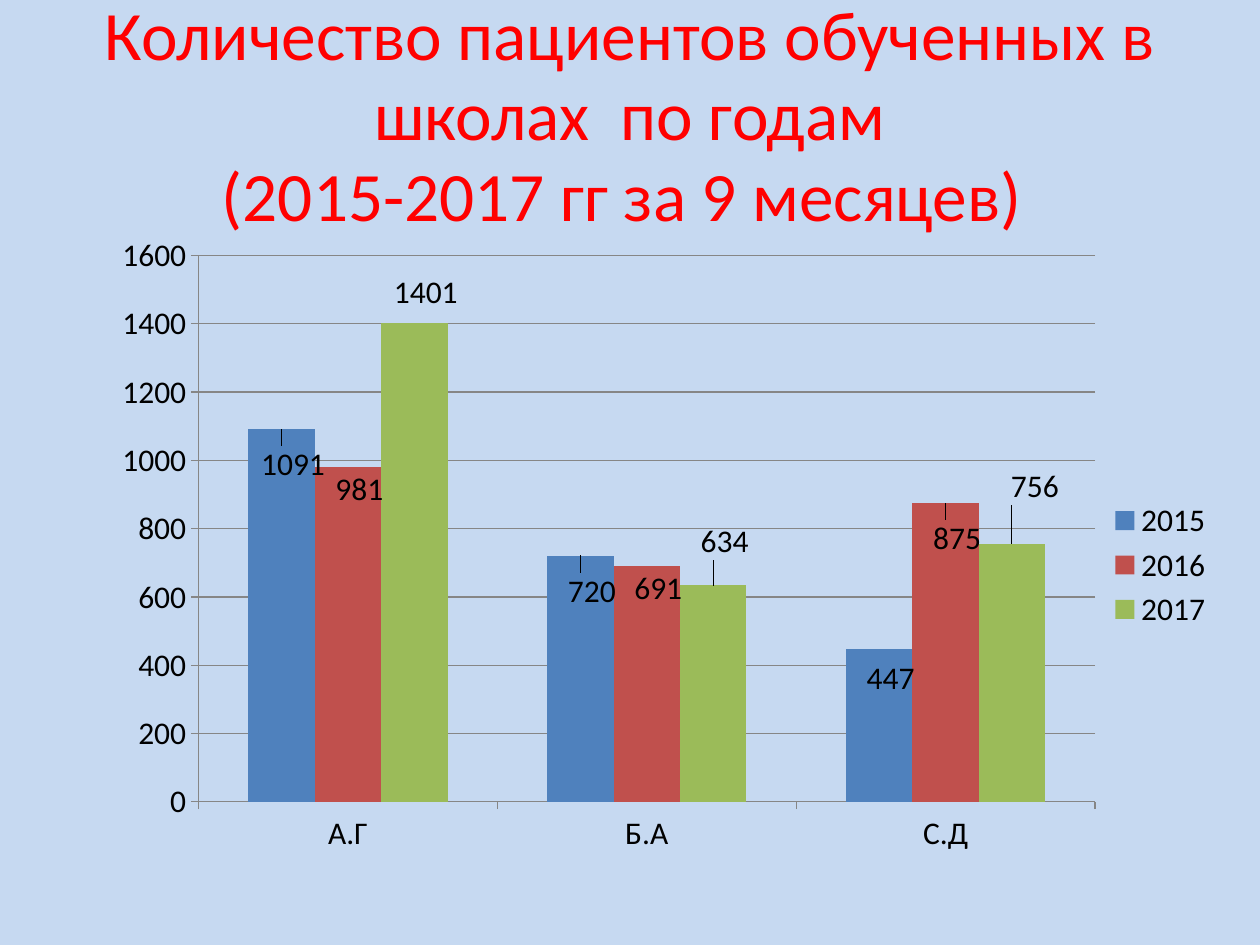
from lxml.etree import SubElement
from pptx import Presentation
from pptx.chart.data import CategoryChartData
from pptx.dml.color import RGBColor
from pptx.enum.chart import XL_CHART_TYPE as ChartType
from pptx.enum.chart import XL_LABEL_POSITION as LabelPosition
from pptx.enum.chart import XL_LEGEND_POSITION as LegendPosition
from pptx.enum.chart import XL_TICK_MARK as TickMark
from pptx.enum.text import MSO_ANCHOR, PP_ALIGN
from pptx.oxml.ns import qn
from pptx.util import Inches, Pt

FONT = "Calibri"
COLORS = {
    "background": "C6D9F1", "title": "FF0000", "text": "000000", "line": "868686",
    "2015": "4F81BD", "2016": "C0504D", "2017": "9BBB59",
}
CLINICS = ["А.Г", "Б.А", "С.Д"]
PATIENTS = {
    "2015": [1091, 720, 447],
    "2016": [981, 691, 875],
    "2017": [1401, 634, 756],
}
# Shift of each value label from the bar's end, as a share of the chart size
LABEL_SHIFTS = {
    "2015": [(0.01, 0.09), (0.01, 0.09), (0.01, 0.08)],
    "2016": [(0.01, 0.07), (0.01, 0.07), (0.01, 0.09)],
    "2017": [(0.01, -0.01), (0.01, -0.03), (0.02, -0.05)],
}


def color(name):
    return RGBColor.from_string(COLORS[name])


def add_manual_layout(layout, **settings):
    manual = SubElement(layout, qn("c:manualLayout"))
    for name, value in settings.items():
        SubElement(manual, qn(f"c:{name}")).set("val", str(value))


def add_title(page, left, top, width, height):
    box = page.shapes.add_textbox(left, top, width, height)
    frame = box.text_frame
    frame.word_wrap = True
    frame.vertical_anchor = MSO_ANCHOR.MIDDLE
    para = frame.paragraphs[0]
    para.text = ("Количество пациентов обученных в школах  по годам\v"
                 "(2015-2017 гг за 9 месяцев) ")
    para.alignment = PP_ALIGN.CENTER
    para.line_spacing = 0.97
    para.font.name = FONT
    para.font.size = Pt(39.6)
    para.font.color.rgb = color("title")


def style_axis(axis):
    axis.major_tick_mark = TickMark.OUTSIDE
    axis.minor_tick_mark = TickMark.NONE
    axis.format.line.color.rgb = color("line")
    axis.format.line.width = Pt(0.75)


def style_series(series):
    series.format.fill.solid()
    series.format.fill.fore_color.rgb = color(series.name)
    series.invert_if_negative = False
    labels = series.data_labels
    labels.show_value = True
    labels.position = LabelPosition.OUTSIDE_END
    for index in range(len(CLINICS)):
        series.points[index].data_label.position = LabelPosition.OUTSIDE_END
    label_nodes = series._element.iter(qn("c:dLbl"))
    for node, (x, y) in zip(list(label_nodes), LABEL_SHIFTS[series.name]):
        layout = SubElement(node, qn("c:layout"))
        node.find(qn("c:idx")).addnext(layout)
        add_manual_layout(layout, x=x, y=y)


def add_patient_chart(page, left, top, width, height):
    data = CategoryChartData()
    data.categories = CLINICS
    for year, counts in PATIENTS.items():
        data.add_series(year, counts)
    chart = page.shapes.add_chart(
        ChartType.COLUMN_CLUSTERED, left, top, width, height, data).chart
    chart.has_title = False
    chart.font.name = FONT
    chart.font.size = Pt(18)
    chart.font.color.rgb = color("text")

    chart.has_legend = True
    chart.legend.position = LegendPosition.RIGHT
    chart.legend.include_in_layout = False

    for axis in (chart.category_axis, chart.value_axis):
        style_axis(axis)
    chart.value_axis.minimum_scale = 0
    chart.value_axis.maximum_scale = 1600
    chart.value_axis.major_unit = 200
    gridlines = chart.value_axis.major_gridlines.format.line
    gridlines.color.rgb = color("line")
    gridlines.width = Pt(0.75)

    plot = chart.plots[0]
    plot.gap_width = 150
    plot.vary_by_categories = False
    for series in plot.series:
        style_series(series)

    area = chart._chartSpace.chart.plotArea
    layout = area.find(qn("c:layout"))
    if layout is None:
        layout = SubElement(area, qn("c:layout"))
        area.insert(0, layout)
    add_manual_layout(layout, layoutTarget="inner", xMode="edge", yMode="edge",
                      x=0.105, y=0.032, w=0.781, h=0.826)


def main():
    deck = Presentation()
    deck.slide_width, deck.slide_height = Inches(10), Inches(7.5)
    page = deck.slides.add_slide(deck.slide_layouts[6])
    page.background.fill.solid()
    page.background.fill.fore_color.rgb = color("background")
    add_title(page, Inches(0.5), Inches(0.3), Inches(9), Inches(1.25))
    add_patient_chart(page, Inches(0.62), Inches(1.86), Inches(9.11), Inches(5.25))
    deck.save("out.pptx")


if __name__ == "__main__":
    main()
